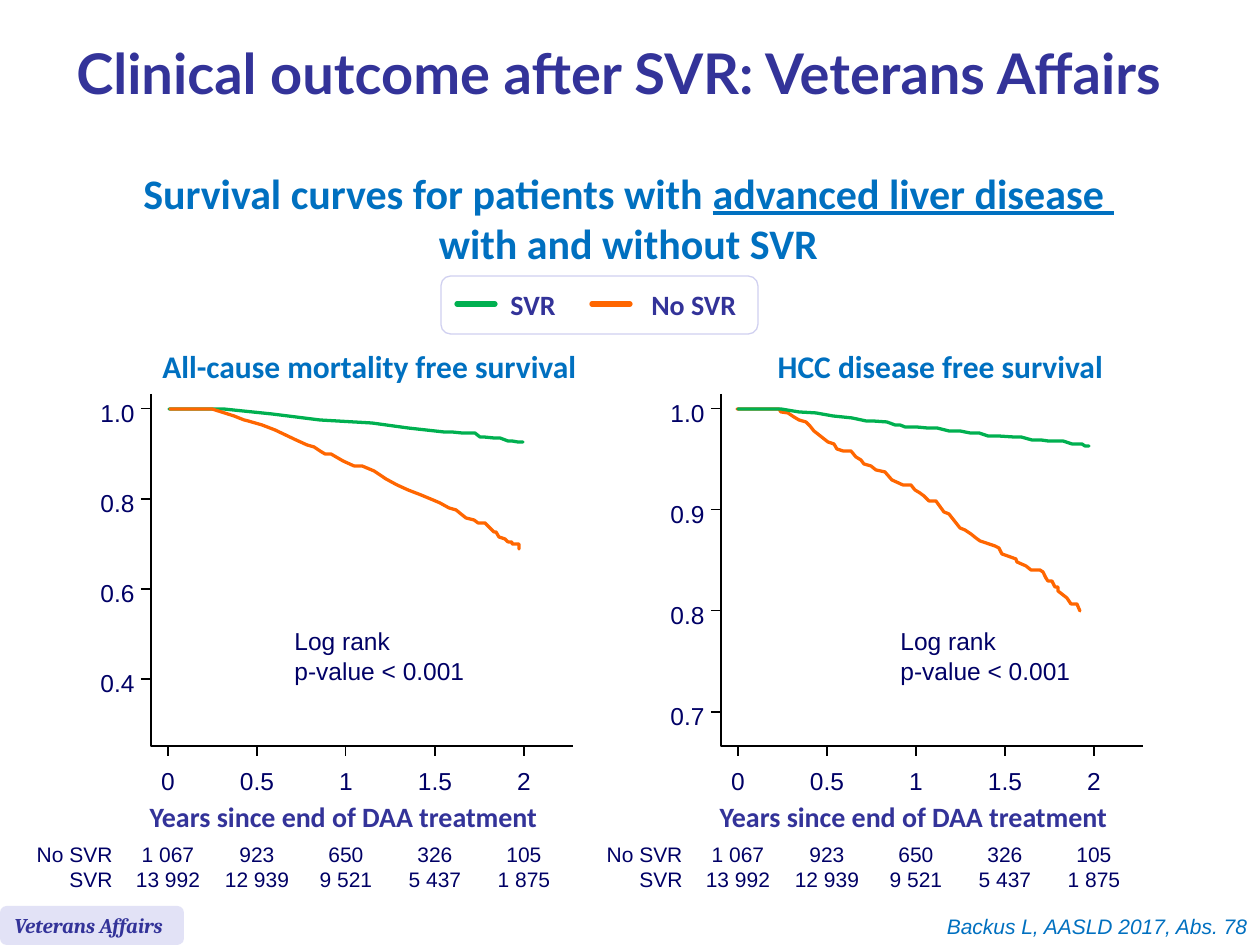
from pptx import Presentation
from pptx import util as u
from pptx.dml.color import RGBColor
from pptx.enum import shapes, text
from pptx.oxml.ns import qn
from lxml import etree

PX = 914400 / 126
INDIGO = RGBColor(0x33, 0x33, 0x99)
BLUE = RGBColor(0x00, 0x70, 0xC0)
NAVY = RGBColor(0x00, 0x00, 0x66)
GREEN = RGBColor(0x00, 0xB0, 0x50)
ORANGE = RGBColor(0xFF, 0x66, 0x00)
BLACK = RGBColor(0x00, 0x00, 0x00)
WHITE = RGBColor(0xFF, 0xFF, 0xFF)
LAVENDER = RGBColor(0xE2, 0xE2, 0xF6)
BORDER = RGBColor(0xD0, 0xD0, 0xF0)
LEFT, CENTER, RIGHT = text.PP_ALIGN.LEFT, text.PP_ALIGN.CENTER, text.PP_ALIGN.RIGHT

AXIS_X, AXIS_TOP, AXIS_BOTTOM, AXIS_END = 151, 394, 746, 573
FIRST_X, STEP_X, FIRST_Y, TICK = 168, 89, 409, 10
PANEL_GAP = 570
YEARS = ["0", "0.5", "1", "1.5", "2"]
AT_RISK = ["1 067\n13 992", "923\n12 939", "650\n9 521", "326\n5 437", "105\n1 875"]

MORTALITY_SVR = [
    (169, 409), (224, 409), (272, 414), (320, 420), (372, 423), (408, 428),
    (444, 432), (452, 432), (462, 433), (475, 433), (480, 437), (484, 437),
    (494, 438), (500, 438), (508, 441), (512, 441), (518, 442), (523, 442)]
MORTALITY_NO_SVR = [
    (170, 409), (212, 409), (234, 416), (244, 420), (248, 421), (262, 425),
    (275, 430), (296, 440), (307, 445), (314, 447), (320, 451), (325, 454),
    (331, 454), (343, 461), (354, 466), (362, 466), (374, 471), (386, 479),
    (397, 485), (408, 490), (421, 495), (433, 500), (440, 503), (449, 508),
    (456, 510), (461, 514), (466, 518), (474, 520), (478, 523), (485, 523),
    (494, 532), (496, 532), (499, 537), (505, 539), (508, 542), (512, 542),
    (512, 544), (519, 544), (519, 549)]
HCC_SVR = [
    (738, 409), (781, 409), (799, 412), (816, 413), (833, 416), (852, 418),
    (866, 421), (872, 421), (887, 422), (895, 425), (900, 425), (905, 427),
    (916, 427), (927, 428), (937, 428), (949, 431), (960, 431), (970, 433),
    (979, 433), (988, 436), (998, 436), (1013, 437), (1021, 437), (1032, 440),
    (1041, 440), (1048, 441), (1063, 441), (1072, 444), (1082, 444),
    (1085, 446), (1089, 446)]
HCC_NO_SVR = [
    (737, 409), (779, 409), (781, 412), (788, 413), (794, 417), (799, 420),
    (806, 422), (810, 426), (814, 431), (828, 442), (834, 444), (837, 449),
    (843, 451), (851, 451), (856, 457), (861, 460), (864, 464), (871, 466),
    (876, 470), (885, 472), (892, 480), (903, 485), (911, 485), (915, 490),
    (920, 493), (924, 496), (929, 501), (936, 501), (944, 512), (949, 514),
    (960, 528), (965, 530), (971, 534), (976, 538), (980, 541), (995, 546),
    (999, 548), (1002, 554), (1016, 559), (1017, 562), (1026, 566),
    (1031, 570), (1040, 570), (1043, 572), (1046, 578), (1048, 581),
    (1052, 581), (1055, 587), (1058, 587), (1058, 591), (1067, 598),
    (1071, 604), (1077, 604), (1080, 611)]


def emu(*lengths):
    return [u.Emu(round(length * PX)) for length in lengths]


def format_run(run, size=14, font="Arial", color=NAVY, bold=False, italic=False, underline=False):
    run.font.size = u.Pt(size)
    run.font.name = font
    run.font.color.rgb = color
    run.font.bold = bold
    run.font.italic = italic
    run.font.underline = underline


def write_text(shape, content, align=LEFT, anchor=text.MSO_ANCHOR.TOP, wrap=False, spacing=None, **style):
    frame = shape.text_frame
    frame.word_wrap = wrap
    frame.vertical_anchor = anchor
    frame.text = content
    for paragraph in frame.paragraphs:
        paragraph.alignment = align
        if spacing:
            paragraph.line_spacing = spacing
        for run in paragraph.runs:
            format_run(run, **style)
    return shape


def add_text(canvas, content, box, **style):
    return write_text(canvas.add_textbox(*emu(*box)), content, **style)


def add_rounded_box(canvas, box, fill, border=None):
    shape = canvas.add_shape(shapes.MSO_SHAPE.ROUNDED_RECTANGLE, *emu(*box))
    shape.shadow.inherit = False
    shape.fill.solid()
    shape.fill.fore_color.rgb = fill
    if border is None:
        shape.line.fill.background()
    else:
        shape.line.color.rgb = border
        shape.line.width = u.Pt(0.75)
    return shape


def add_line(canvas, start, end, color=BLACK, width=0.63):
    connector = canvas.add_connector(shapes.MSO_CONNECTOR.STRAIGHT, *emu(*start, *end))
    connector.line.color.rgb = color
    connector.line.width = u.Pt(width)
    etree.SubElement(connector._element.spPr, qn("a:effectLst"))
    return connector


def add_polyline(canvas, points, color=BLACK, width=0.63):
    builder = canvas.build_freeform(*points[0], scale=PX)
    builder.add_line_segments(points[1:], close=False)
    shape = builder.convert_to_shape()
    shape.shadow.inherit = False
    shape.fill.background()
    shape.line.color.rgb = color
    shape.line.width = u.Pt(width)
    return shape


def round_caps(shape):
    shape._element.spPr.find(qn("a:ln")).set("cap", "rnd")


def add_legend(slide):
    canvas = slide.shapes.add_group_shape().shapes
    add_rounded_box(canvas, (441, 276, 317, 58), WHITE, BORDER)
    entries = [("SVR", GREEN, 457, 498, 72), ("No SVR", ORANGE, 592, 639, 112)]
    for label, color, line_x, label_x, width in entries:
        round_caps(add_line(canvas, (line_x, 304), (line_x + 38, 304), color, 3))
        add_text(canvas, label, (label_x, 281, width, 47),
                 size=16, font="Calibri", color=INDIGO, bold=True)


def add_panel(slide, shift, title, title_box, levels, step_y, curves, note_x):
    canvas = slide.shapes.add_group_shape().shapes
    axis_x = AXIS_X + shift
    add_polyline(canvas, [(axis_x, AXIS_TOP), (axis_x, AXIS_BOTTOM), (AXIS_END + shift, AXIS_BOTTOM)])
    for row, level in enumerate(levels):
        y = FIRST_Y + row * step_y
        add_line(canvas, (axis_x - TICK, y), (axis_x, y))
        add_text(canvas, level, (88 + shift, y - 17, 59, 40), align=RIGHT)
    for column, (year, counts) in enumerate(zip(YEARS, AT_RISK)):
        x = FIRST_X + shift + column * STEP_X
        add_line(canvas, (x, AXIS_BOTTOM), (x, AXIS_BOTTOM + TICK))
        add_text(canvas, year, (x - 30, 760, 60, 40), align=CENTER)
        add_text(slide.shapes, counts, (x - 45, 835, 90, 63), align=CENTER, size=12)
    for points, color in curves:
        round_caps(add_polyline(canvas, points, color, 1.88))
    add_text(canvas, "Log rank\np-value < 0.001", (note_x, 620, 197, 68))
    add_text(slide.shapes, title, title_box,
             align=CENTER, size=18, font="Calibri", color=BLUE, bold=True)
    add_text(slide.shapes, "Years since end of DAA treatment", (132 + shift, 793, 423, 47),
             align=CENTER, size=16, font="Calibri", color=INDIGO, bold=True)
    add_text(slide.shapes, "No SVR\nSVR", (23 + shift, 835, 102, 63), align=RIGHT, size=12)


def add_heading(slide):
    style = dict(size=24, font="Calibri", color=BLUE, bold=True)
    heading = add_text(slide.shapes, "Survival curves for patients with \nwith and without SVR",
                       (129, 161, 999, 115), align=CENTER, **style)
    run = heading.text_frame.paragraphs[0].add_run()
    run.text = "advanced liver disease "
    format_run(run, underline=True, **style)


def main():
    presentation = Presentation()
    presentation.slide_width, presentation.slide_height = emu(1260, 945)
    slide = presentation.slides.add_slide(presentation.slide_layouts[6])
    add_text(slide.shapes, "Clinical outcome after SVR: Veterans Affairs", (64, 10, 1196, 135),
             anchor=text.MSO_ANCHOR.MIDDLE, wrap=True, spacing=0.85,
             size=32, font="Lato", color=INDIGO, bold=True)
    add_heading(slide)
    add_legend(slide)
    add_panel(slide, 0, "All-cause mortality free survival", (146, 341, 447, 50),
              ["1.0", "0.8", "0.6", "0.4"], 90,
              [(MORTALITY_SVR, GREEN), (MORTALITY_NO_SVR, ORANGE)], 282)
    add_panel(slide, PANEL_GAP, "HCC disease free survival", (764, 341, 353, 50),
              ["1.0", "0.9", "0.8", "0.7"], 101,
              [(HCC_NO_SVR, ORANGE), (HCC_SVR, GREEN)], 888)
    tag = add_rounded_box(slide.shapes, (0, 906, 184, 39), LAVENDER)
    write_text(tag, "Veterans Affairs", anchor=text.MSO_ANCHOR.MIDDLE,
               size=12, font="Cambria", color=INDIGO, bold=True, italic=True)
    add_text(slide.shapes, "Backus L, AASLD 2017, Abs. 78", (581, 907, 679, 38),
             align=RIGHT, wrap=True, size=12, color=BLUE, italic=True)
    presentation.save("out.pptx")


if __name__ == "__main__":
    main()
